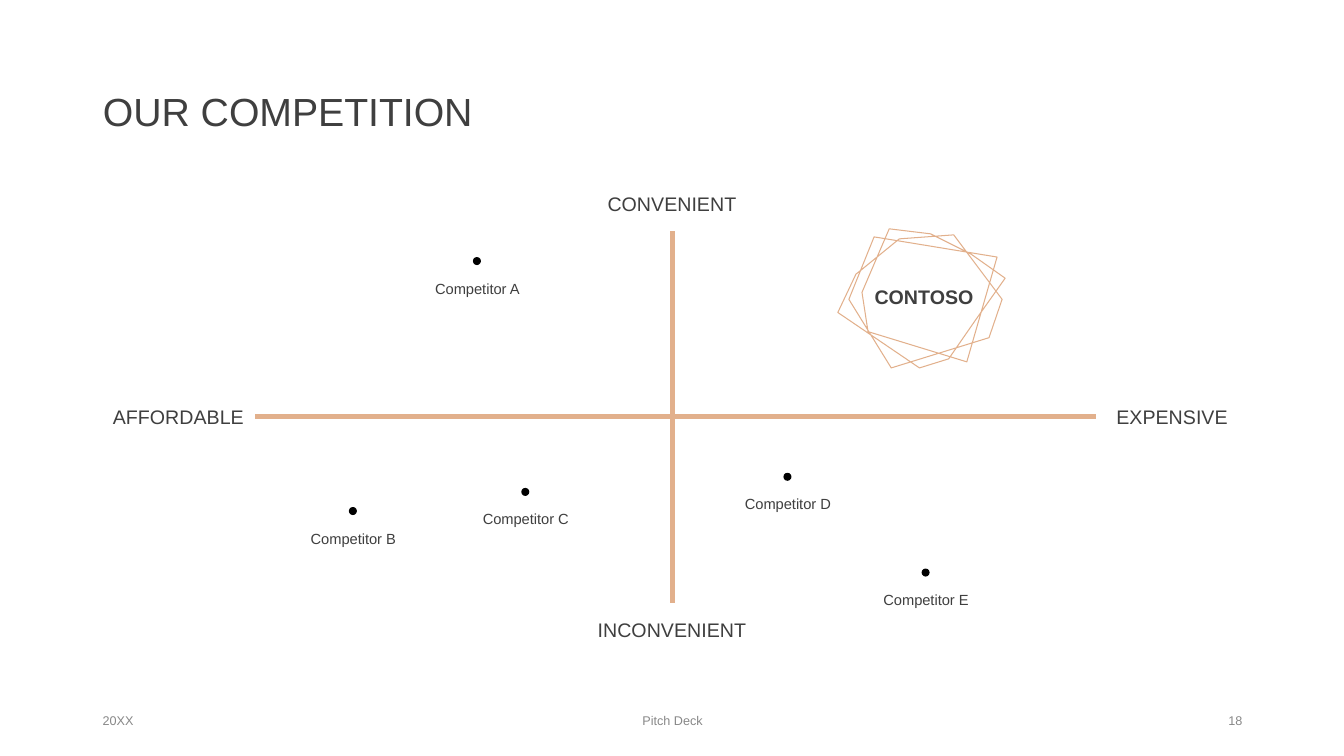
from pptx import Presentation
from pptx.dml.color import RGBColor as RGB
from pptx.enum.shapes import MSO_CONNECTOR as LINE, MSO_SHAPE as SHAPE
from pptx.enum.text import MSO_ANCHOR as ANCHOR, MSO_AUTO_SIZE as FIT, PP_ALIGN as ALIGN
from pptx.oxml.ns import qn
from pptx.util import Inches, Pt
from lxml.etree import SubElement

COLORS = {"text": "3F3F3F", "axis": "E2B08C", "foot": "888888", "dot": "000000"}
FRAME = {
    "word_wrap": True,
    "auto_size": FIT.NONE,
    "vertical_anchor": ANCHOR.MIDDLE,
    "margin_left": Inches(0.1),
    "margin_right": Inches(0.1),
    "margin_top": Inches(0.05),
    "margin_bottom": Inches(0.05),
}


def color(name):
    return RGB.from_string(COLORS[name])


def write(box, text, size, align=ALIGN.CENTER, tint="text", bold=False):
    frame = box.text_frame
    for key, value in FRAME.items():
        setattr(frame, key, value)
    para = frame.paragraphs[0]
    para.alignment = align
    run = para.add_run()
    run.text = text
    font = {"name": "Arial", "size": Pt(size), "bold": bold}
    for key, value in font.items():
        setattr(run.font, key, value)
    run.font.color.rgb = color(tint)


deck = Presentation()
deck.slide_width, deck.slide_height = Inches(13.33), Inches(7.5)
slide = deck.slides.add_slide(deck.slide_layouts[5])
shapes = slide.shapes

# Axes
for ends in [(2.53, 4.13, 10.87, 4.13), (6.67, 5.98, 6.67, 2.29)]:
    axis = shapes.add_connector(LINE.STRAIGHT, *map(Inches, ends))
    axis.line.color.rgb = color("axis")
    axis.line.width = Pt(3.5)
    SubElement(axis._element.spPr, qn("a:effectLst"))

# Title
title = shapes.title
title.left, title.top = Inches(0.92), Inches(0.4)
title.width, title.height = Inches(11.5), Inches(1.45)
write(title, "OUR COMPETITION", 28, ALIGN.LEFT)
title.text_frame.paragraphs[0].line_spacing = 0.9

# Axis labels
labels = [
    ("CONVENIENT", 5.73, 1.75, 1.87),
    ("INCONVENIENT", 5.73, 5.98, 1.87),
    ("AFFORDABLE", 1.01, 3.86, 1.52),
    ("EXPENSIVE", 10.87, 3.86, 1.51),
]
for text, left, top, width in labels:
    box = shapes.add_textbox(Inches(left), Inches(top), Inches(width), Inches(0.54))
    write(box, text, 14)

# Rivals: a dot with its name below
rivals = {
    "A": (4.69, 2.55),
    "B": (3.46, 5.03),
    "C": (5.17, 4.84),
    "D": (7.77, 4.69),
    "E": (9.14, 5.64),
}
for name, (left, top) in rivals.items():
    dot = shapes.add_shape(SHAPE.OVAL, Inches(left), Inches(top), Inches(0.08), Inches(0.08))
    dot.shadow.inherit = False
    dot.fill.solid()
    dot.fill.fore_color.rgb = color("dot")
    dot.line.fill.background()
    box = shapes.add_textbox(Inches(left - 0.6), Inches(top + 0.04), Inches(1.29), Inches(0.54))
    write(box, f"Competitor {name}", 10.5)

# Our own place, ringed by a tangled outline
points = [
    (8.92, 2.37), (8.54, 2.68), (8.49, 2.72), (8.31, 3.1), (9.12, 3.65), (9.41, 3.56),
    (9.68, 3.17), (9.97, 2.76), (9.63, 2.52), (9.23, 2.32), (8.82, 2.27), (8.55, 2.9),
    (8.61, 3.29), (9.59, 3.59), (9.89, 2.55), (8.67, 2.35), (8.42, 2.97), (8.84, 3.65),
    (9.81, 3.35), (9.94, 2.97), (9.46, 2.33),
]
points = [(Inches(x), Inches(y)) for x, y in points]
path = shapes.build_freeform(*points[0])
path.add_line_segments(points[1:], close=True)
ring = path.convert_to_shape()
ring.shadow.inherit = False
ring.fill.background()
ring.line.color.rgb = color("axis")
ring.line.width = Pt(0.75)
box = shapes.add_textbox(Inches(8.23), Inches(2.37), Inches(1.87), Inches(1.15))
write(box, "CONTOSO", 14, bold=True)

# Footer
footer = [
    ("20XX", 0.92, 3, ALIGN.LEFT),
    ("Pitch Deck", 4.42, 4.5, ALIGN.CENTER),
    ("18", 9.42, 3, ALIGN.RIGHT),
]
for text, left, width, align in footer:
    box = shapes.add_textbox(Inches(left), Inches(6.95), Inches(width), Inches(0.4))
    write(box, text, 9, align, "foot")

deck.save("out.pptx")
